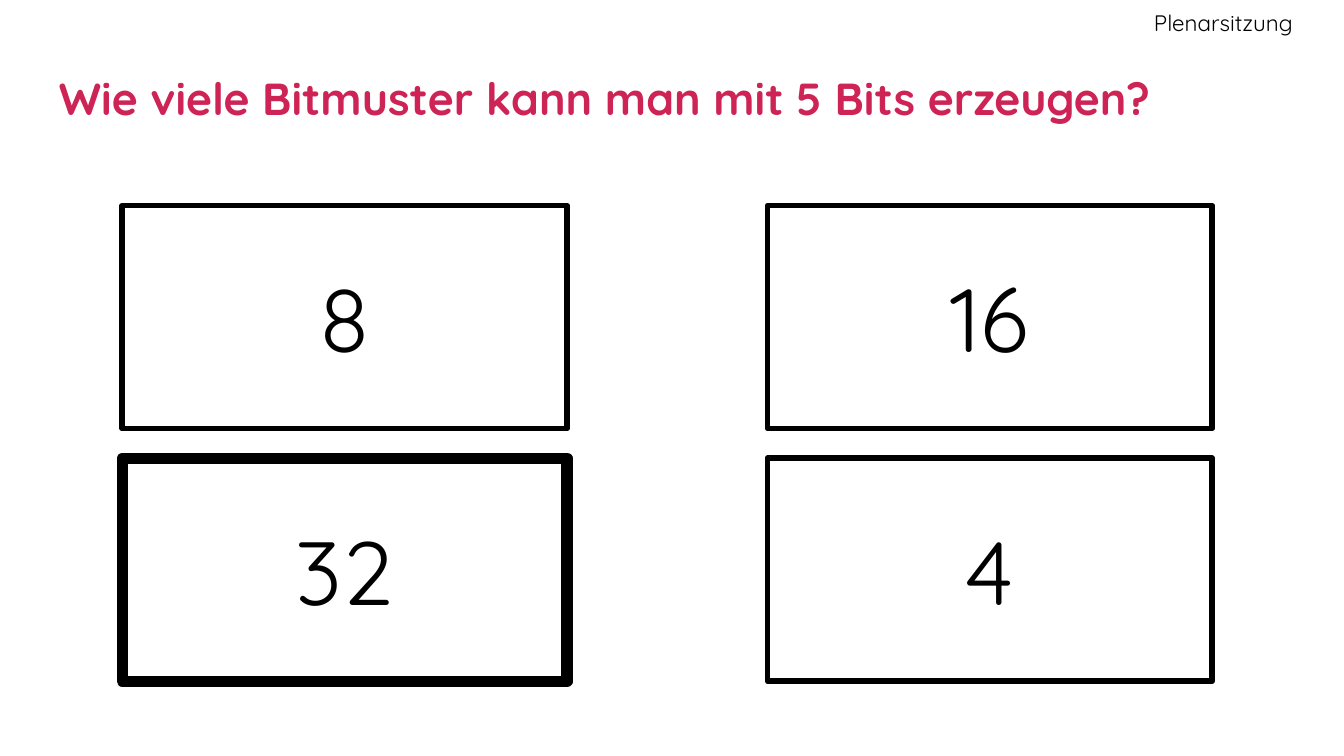
from pptx import Presentation
from pptx.util import Inches, Pt
from pptx.dml.color import RGBColor
from pptx.enum import shapes, text

FONT = "Quicksand"
BLACK, WHITE, PINK = "000000", "FFFFFF", "CD2355"


def rgb(value):
    return RGBColor.from_string(value)


def write(sp, wording, size, color, align, insets, bold=False):
    """Put one middle-anchored line of text into a shape."""
    tf = sp.text_frame
    tf.word_wrap = True
    tf.vertical_anchor = text.MSO_ANCHOR.MIDDLE
    for side, inset in zip(("left", "top", "right", "bottom"), insets):
        setattr(tf, f"margin_{side}", Inches(inset))
    p = tf.paragraphs[0]
    p.alignment = align
    r = p.add_run()
    r.text = wording
    for name, value in {"name": FONT, "size": Pt(size), "bold": bold}.items():
        setattr(r.font, name, value)
    r.font.color.rgb = rgb(color)


def add_heading(s, box, wording):
    sp = s.shapes.add_textbox(*map(Inches, box))
    write(sp, wording, 24, PINK, text.PP_ALIGN.LEFT, [0.1] * 4, bold=True)


def add_session_label(s, box, wording):
    sp = s.shapes.add_textbox(*map(Inches, box))
    write(sp, wording, 12, BLACK, text.PP_ALIGN.RIGHT, (0.1, 0.1, 0, 0.1))


def add_answers(s, box, answers, correct):
    """Lay out the answers two to a row, with a thicker frame on the correct one."""
    left, top, width, height = box
    card_w, card_h = 3.31, 1.66
    for i, answer in enumerate(answers):
        row, col = divmod(i, 2)
        x = left + col * (width - card_w)
        y = top + row * (height - card_h)
        sp = s.shapes.add_shape(shapes.MSO_SHAPE.RECTANGLE,
                                *map(Inches, (x, y, card_w, card_h)))
        sp.shadow.inherit = False
        sp.fill.solid()
        sp.fill.fore_color.rgb = rgb(WHITE)
        sp.line.color.rgb = rgb(BLACK)
        sp.line.width = Pt(6 if answer == correct else 3)
        write(sp, answer, 48, BLACK, text.PP_ALIGN.CENTER, [0.05] * 4)


def main():
    prs = Presentation()
    # 16:9 page
    prs.slide_width = Inches(10)
    prs.slide_height = prs.slide_width * 9 // 16
    s = prs.slides.add_slide(prs.slide_layouts[6])

    # Question and session label
    add_heading(s, (0.34, 0.34, 9.32, 0.77),
                "Wie viele Bitmuster kann man mit 5 Bits erzeugen?")
    add_session_label(s, (7.48, 0, 2.14, 0.34), "Plenarsitzung")

    # Answer grid
    add_answers(s, (0.91, 1.53, 8.11, 3.54), ("8", "16", "32", "4"), correct="32")

    prs.save("out.pptx")


if __name__ == "__main__":
    main()
